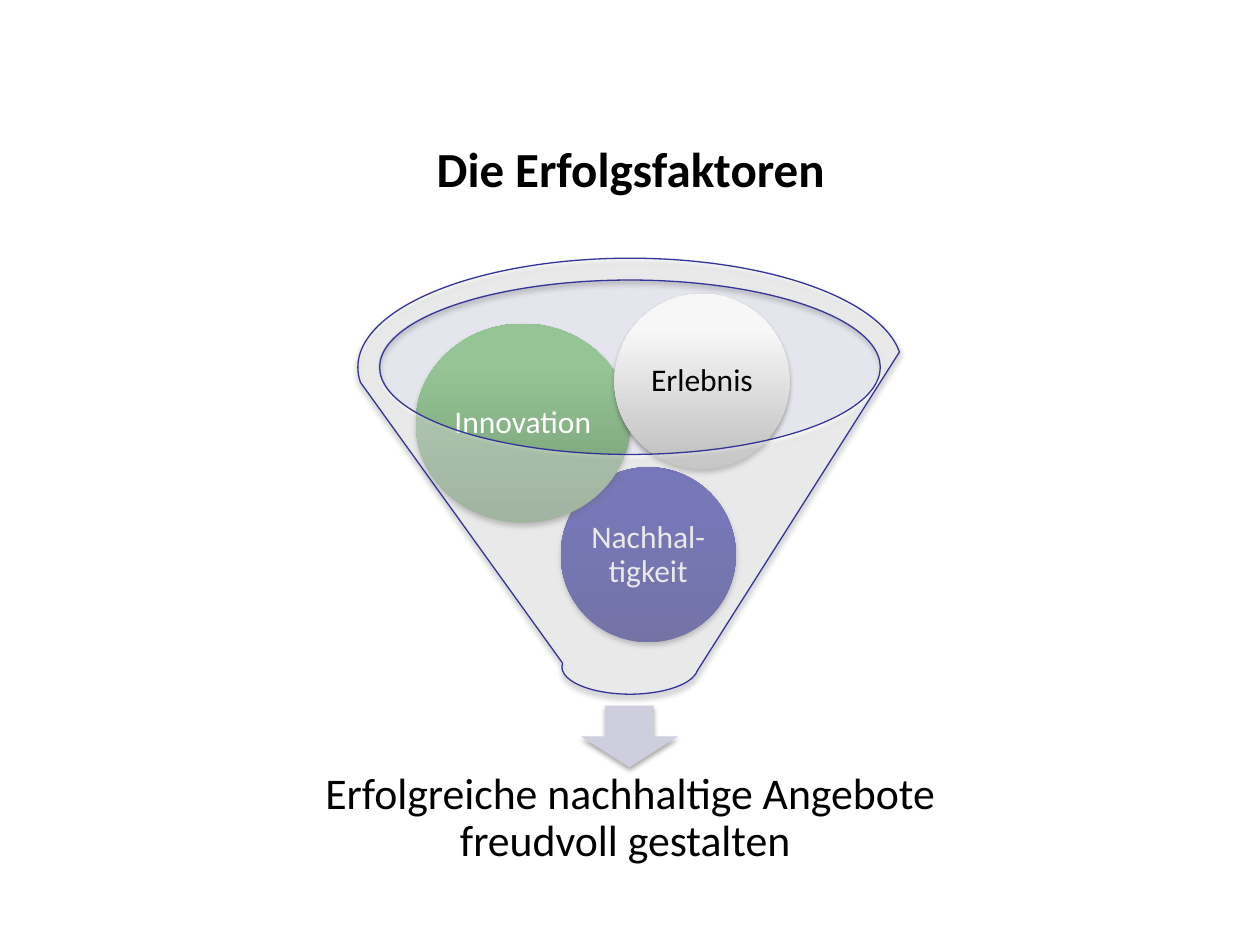
from dataclasses import dataclass

from lxml.etree import SubElement
from pptx import Presentation
from pptx.dml.color import RGBColor
from pptx.enum.shapes import MSO_SHAPE
from pptx.enum.text import MSO_ANCHOR, PP_ALIGN
from pptx.oxml.ns import qn
from pptx.util import Pt

COLORS = {
    "black": "000000",
    "white": "FFFFFF",
    "rim": "BFBFD4",
    "arrow": "CECEDE",
    "outline": "333399",
}


@dataclass(frozen=True)
class Box:
    left: float
    top: float
    width: float
    height: float

    def lengths(self) -> tuple:
        return Pt(self.left), Pt(self.top), Pt(self.width), Pt(self.height)


@dataclass(frozen=True)
class Ball:
    text: str
    box: Box
    stops: tuple
    color: str


BALLS = [
    Ball("Nachhal-tigkeit", Box(320.4, 267, 100.1, 100.1),
         ("1B1B7E", "2323A3", "2020A6"), "white"),
    Ball("Innovation", Box(237.6, 185, 122.4, 113.8),
         ("739873", "95C595", "95C795"), "white"),
    Ball("Erlebnis", Box(351.1, 167.8, 100.1, 100.1),
         ("BEBEBE", "F7F7F7", "F8F8F8"), "black"),
]
STOP_POSITIONS = (0, 80, 100)


def add_text(tf, text: str, *, size: float, color: str = "black", bold: bool = False,
             inset: float = 7.2, spacing: float = 0.9) -> None:
    tf.word_wrap = True
    tf.vertical_anchor = MSO_ANCHOR.MIDDLE
    tf.margin_left = tf.margin_right = Pt(inset)
    tf.margin_top = tf.margin_bottom = Pt(inset)
    p = tf.paragraphs[0]
    p.alignment = PP_ALIGN.CENTER
    p.line_spacing = spacing
    r = p.add_run()
    r.text = text
    r.font.name = "Calibri"
    r.font.size = Pt(size)
    r.font.bold = bold
    r.font.color.rgb = RGBColor.from_string(COLORS[color])


def add_shadow(sp) -> None:
    effects = sp._element.spPr.find(qn("a:effectLst"))
    shadow = SubElement(effects, qn("a:outerShdw"), blurRad=str(Pt(3.1)),
                        dist=str(Pt(1.8)), dir="5400000", rotWithShape="0")
    clr = SubElement(shadow, qn("a:srgbClr"), val=COLORS["black"])
    SubElement(clr, qn("a:alpha"), val="35000")


def add_shape(slide, kind, box: Box, *, fill: str = "", alpha: int = 100,
              line: str = "", shadow: bool = True):
    sp = slide.shapes.add_shape(kind, *box.lengths())
    sp.shadow.inherit = False
    if fill:
        sp.fill.solid()
        sp.fill.fore_color.rgb = RGBColor.from_string(COLORS[fill])
    if alpha < 100:
        clr = sp._element.spPr.find(qn("a:solidFill")).find(qn("a:srgbClr"))
        SubElement(clr, qn("a:alpha"), val=str(alpha * 1000))
    if line:
        sp.line.color.rgb = RGBColor.from_string(COLORS[line])
        sp.line.width = Pt(0.75)
    else:
        sp.line.fill.background()
    if shadow:
        add_shadow(sp)
    return sp


def add_ball(slide, ball: Ball) -> None:
    sp = add_shape(slide, MSO_SHAPE.OVAL, ball.box)
    sp.fill.gradient()
    sp.fill.gradient_angle = 90
    stops = sp._element.spPr.find(qn("a:gradFill")).find(qn("a:gsLst"))
    for stop in list(stops):
        stops.remove(stop)
    for pos, color in zip(STOP_POSITIONS, ball.stops):
        stop = SubElement(stops, qn("a:gs"), pos=str(pos * 1000))
        SubElement(stop, qn("a:srgbClr"), val=color)
    add_text(sp.text_frame, ball.text, size=18, color=ball.color, inset=2)


def main() -> None:
    prs = Presentation()
    prs.slide_width, prs.slide_height = Pt(720), Pt(540)
    slide = prs.slides.add_slide(prs.slide_layouts[5])

    title = slide.shapes.title
    title.left, title.top, title.width, title.height = Box(39.6, 67.7, 641.5, 56.2).lengths()
    add_text(title.text_frame, "Die Erfolgsfaktoren", size=28, bold=True, spacing=1.0)

    add_shape(slide, MSO_SHAPE.OVAL, Box(216, 159.8, 286.6, 99.4),
              fill="rim", alpha=40, shadow=False)
    add_shape(slide, MSO_SHAPE.DOWN_ARROW, Box(332, 403.2, 55.4, 35.3), fill="arrow")
    result = slide.shapes.add_textbox(*Box(139, 434.2, 442, 67).lengths())
    add_text(result.text_frame, "Erfolgreiche nachhaltige Angebote freudvoll gestalten ",
             size=25, inset=13.7)

    for ball in BALLS:
        add_ball(slide, ball)
    add_shape(slide, MSO_SHAPE.FUNNEL, Box(204.5, 147.6, 311, 249.1),
              fill="white", alpha=40, line="outline")

    prs.save("out.pptx")


if __name__ == "__main__":
    main()
